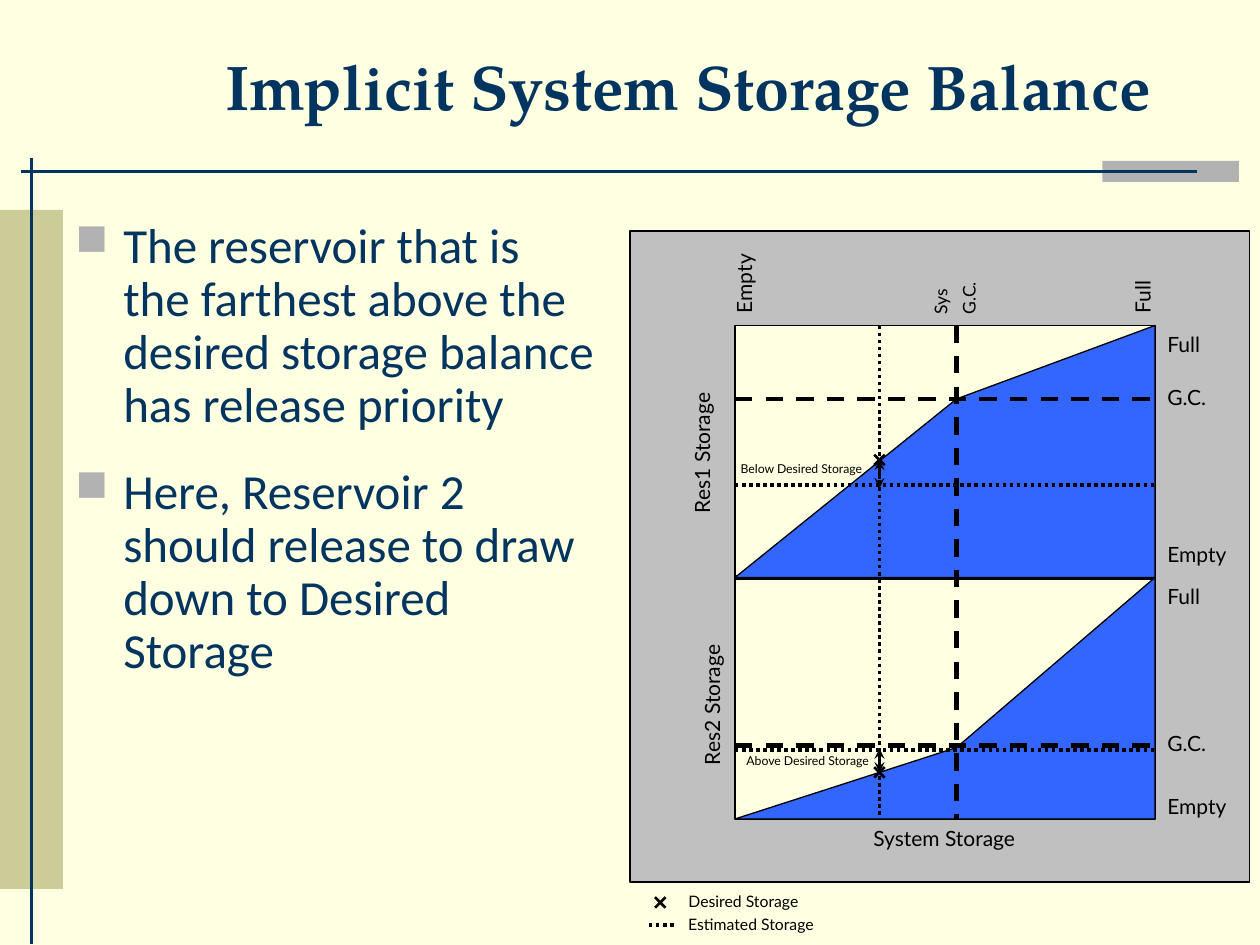
"""Build the slide on implicit system storage balance between two reservoirs."""
from lxml import etree
from pptx import Presentation
from pptx import util as u
from pptx.dml.color import RGBColor
from pptx.enum import dml, shapes, text
from pptx.oxml import ns

NAVY = RGBColor(0x01, 0x34, 0x5F)
CREAM = RGBColor(0xFF, 0xFF, 0xE1)
KHAKI = RGBColor(0xCC, 0xCC, 0x99)
BAR_GRAY = RGBColor(0xB2, 0xB2, 0xB2)
PANEL_GRAY = RGBColor(0xC0, 0xC0, 0xC0)
WATER = RGBColor(0x33, 0x66, 0xFF)
BLACK = RGBColor(0, 0, 0)

COLUMNS, ROWS = 120, 90
CELL = u.Inches(10) // COLUMNS
DASH, DOT = dml.MSO_LINE.DASH, dml.MSO_LINE.ROUND_DOT

deck = Presentation()
deck.slide_width, deck.slide_height = COLUMNS * CELL, ROWS * CELL
page = deck.slides.add_slide(deck.slide_layouts[6])
page.background.fill.solid()
page.background.fill.fore_color.rgb = CREAM


def grid(*cells):
    return [round(cell * CELL) for cell in cells]


def write(words, place, size=12, font="Lato", color=BLACK, bold=False, turn=0,
          align=text.PP_ALIGN.LEFT, anchor=text.MSO_ANCHOR.TOP,
          gap=0, spacing=1.0, bullet=None):
    box = page.shapes.add_textbox(*grid(*place))
    box.rotation = turn
    frame = box.text_frame
    frame.word_wrap = True
    frame.vertical_anchor = anchor
    for index, line in enumerate(words.split("\n")):
        para = frame.paragraphs[0] if index == 0 else frame.add_paragraph()
        para.alignment = align
        para.line_spacing = spacing
        if index:
            para.space_before = u.Pt(gap)
        if bullet:
            props = para._p.get_or_add_pPr()
            props.set("marL", str(u.Inches(0.38)))
            props.set("indent", str(u.Inches(-0.38)))
            tint = etree.SubElement(props, ns.qn("a:buClr"))
            etree.SubElement(tint, ns.qn("a:srgbClr"), val=str(BAR_GRAY))
            etree.SubElement(props, ns.qn("a:buSzPct"), val="90000")
            etree.SubElement(props, ns.qn("a:buChar"), char=bullet)
        span = para.add_run()
        span.text = line
        span.font.size, span.font.name = u.Pt(size), font
        span.font.bold, span.font.color.rgb = bold, color


def rule(x1, y1, x2, y2, width=1.5, color=BLACK, dash=None, arrows=False):
    line = page.shapes.add_connector(shapes.MSO_CONNECTOR.STRAIGHT, *grid(x1, y1, x2, y2))
    line.line.color.rgb = color
    line.line.width = u.Pt(width)
    if dash:
        line.line.dash_style = dash
    if arrows:
        for end in ("a:headEnd", "a:tailEnd"):
            etree.SubElement(line.line._ln, ns.qn(end), type="stealth")
    etree.SubElement(line._element.spPr, ns.qn("a:effectLst"))


left, right, top, middle, bottom = 70, 110, 31, 55, 78
system_gc, estimate = 91.1, 83.76

for place, color, outlined in [
    ((105, 15.33, 13, 2), BAR_GRAY, False),
    ((0, 20, 6, 64.67), KHAKI, False),
    ((60, 22, 59, 62), PANEL_GRAY, True),
    ((left, top, right - left, bottom - top), CREAM, True),
]:
    block = page.shapes.add_shape(shapes.MSO_SHAPE.RECTANGLE, *grid(*place))
    block.shadow.inherit = False
    block.fill.solid()
    block.fill.fore_color.rgb = color
    if outlined:
        block.line.color.rgb = BLACK
        block.line.width = u.Pt(0.75)
    else:
        block.line.fill.background()

rule(2, 16.33, 114, 16.33, color=NAVY)
rule(3, 15, 3, 89.9, color=NAVY)
write("Implicit System Storage Balance", (20.25, 1, 96.8, 14.25), size=36,
      font="TeX Gyre Pagella", color=NAVY, bold=True, anchor=text.MSO_ANCHOR.MIDDLE)
write("The reservoir that is the farthest above the desired storage balance has release priority\n"
      "Here, Reservoir 2 should release to draw down to Desired Storage",
      (6, 20.5, 52, 59.5), size=28, font="Calibri", color=NAVY,
      gap=19.6, spacing=0.9, bullet="■")

rule(left, middle, right, middle, width=3)
for high, low, gc, knee in [(middle, bottom, 71, 71.2), (top, middle, 38, 38)]:
    outline = page.shapes.build_freeform(*grid(left, low), scale=1.0)
    outline.add_line_segments([grid(system_gc, knee), grid(right, high), grid(right, low)])
    storage = outline.convert_to_shape()
    storage.shadow.inherit = False
    storage.fill.solid()
    storage.fill.fore_color.rgb = WATER
    storage.line.color.rgb = BLACK
    storage.line.width = u.Pt(0.75)
    rule(left, gc, right, gc, width=2.5, dash=DASH)
rule(system_gc, top, system_gc, bottom, width=2.5, dash=DASH)
rule(estimate, top, estimate, bottom, width=2, dash=DOT)
for level in (46.2, 71.45):
    rule(left, level, right, level, width=2, dash=DOT)

for words, row in [("Full", top), ("G.C.", 36), ("Empty", 51),
                   ("Full", middle), ("G.C.", 69), ("Empty", 75)]:
    write(words, (right, row, 8, 3.6))
for words, place in [("Empty", (66.84, 25.2, 8, 3.6)), ("Full", (104.8, 25.2, 8, 3.6)),
                     ("Res1 Storage", (57.84, 39.24, 18, 3.6)),
                     ("Res2 Storage", (58.8, 63.24, 18, 3.6))]:
    write(words, place, turn=270)
write("Sys\nG.C.", (87.1, 24, 8, 6.24), size=10, turn=270, gap=4)
write("System Storage", (82, bottom, 18, 3.6))

for words, place, size in [("Below Desired Storage", (68.4, 43.32, 15.84, 2.64), 7),
                           ("Above Desired Storage", (68.64, 71.16, 16.56, 2.64), 7),
                           ("Desired Storage", (62.64, 84.36, 16.32, 3), 9),
                           ("Estimated Storage", (63.36, 86.52, 16.32, 3), 9)]:
    write(words, place, size=size, align=text.PP_ALIGN.CENTER)

for x, y in [(estimate, 43.8), (estimate, 73.56), (62.88, 85.95)]:
    for slant in (-0.5, 0.5):
        rule(x - 0.5, y - slant, x + 0.5, y + slant)
for start, end in [(43.8, 46.5), (71.3, 73.56)]:
    rule(estimate, start, estimate, end, arrows=True)
rule(61.8, 88.1, 64.2, 88.1, width=2, dash=DOT)

deck.save("out.pptx")
